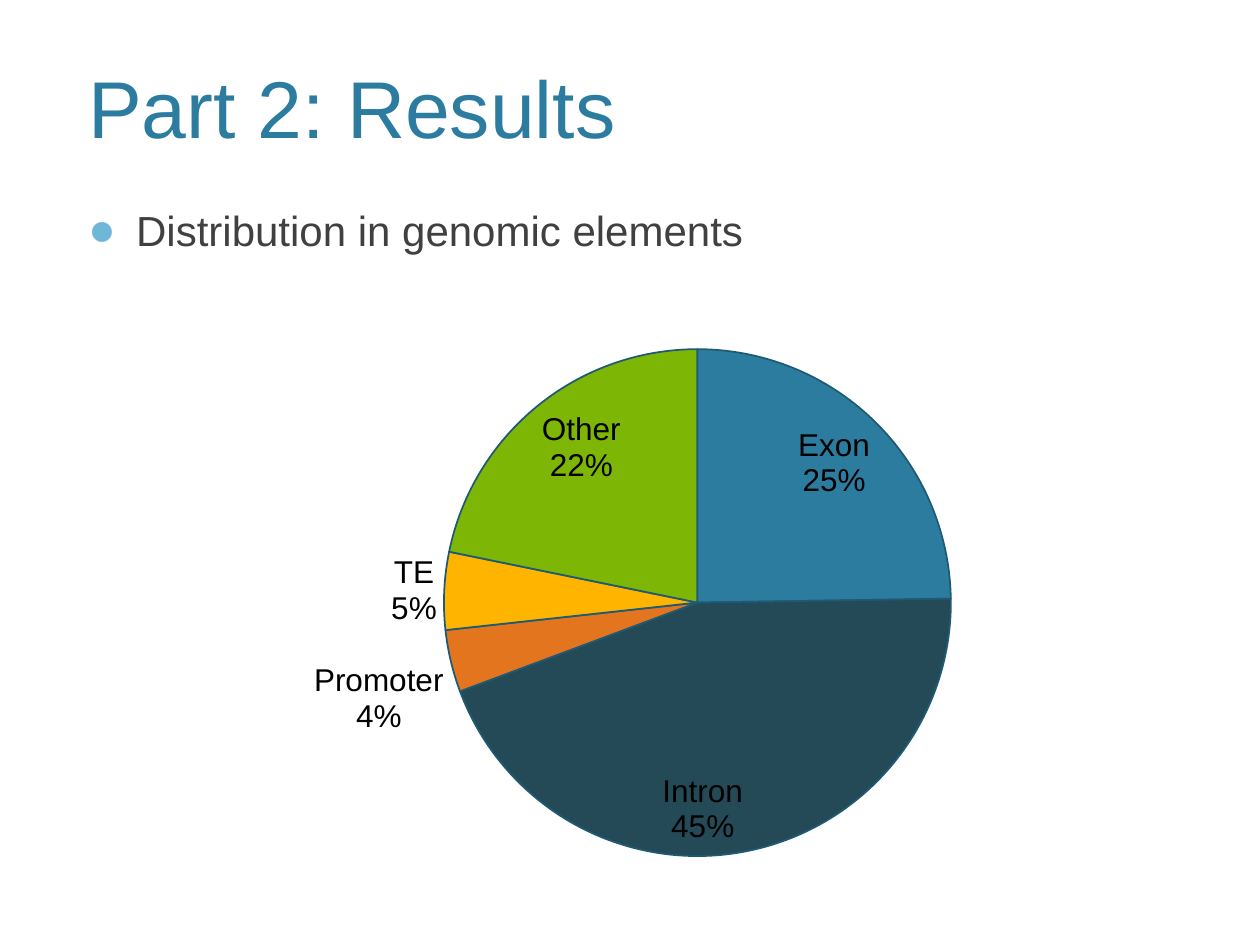
from dataclasses import dataclass

from lxml.etree import SubElement
from pptx import Presentation
from pptx.chart.data import CategoryChartData
from pptx.dml.color import RGBColor
from pptx.enum.chart import XL_CHART_TYPE, XL_LABEL_POSITION as LabelPosition
from pptx.enum.text import MSO_ANCHOR, MSO_AUTO_SIZE, PP_ALIGN
from pptx.oxml import parse_xml
from pptx.oxml.ns import nsdecls, qn
from pptx.util import Cm, Pt


@dataclass(frozen=True)
class Theme:
    font: str = "Arial"
    title: str = "2C7C9F"
    body: str = "404040"
    bullet: str = "6FB7D7"
    label: str = "000000"
    outline: str = "1F5A74"
    title_size: int = 46
    body_size: int = 24
    label_size: int = 18


@dataclass(frozen=True)
class Box:
    left: float
    top: float
    width: float
    height: float

    def lengths(self) -> tuple:
        return Cm(self.left), Cm(self.top), Cm(self.width), Cm(self.height)


@dataclass(frozen=True)
class Slice:
    name: str
    value: int
    color: str
    position: LabelPosition = LabelPosition.INSIDE_END


THEME = Theme()
TITLE_BOX = Box(1.52, -0.46, 22.35, 3.71)
BODY_BOX = Box(1.52, 3.99, 22.35, 12.07)
CHART_BOX = Box(3.45, 5.72, 18.52, 11.89)
PIE_BOX = Box(5.5, 1.32, 10.22, 10.22)
SLICES = [
    Slice("Exon", 25, "2C7C9F"),
    Slice("Intron", 45, "244A58"),
    Slice("Promoter", 4, "E2751D", LabelPosition.OUTSIDE_END),
    Slice("TE", 5, "FFB400", LabelPosition.OUTSIDE_END),
    Slice("Other", 22, "7EB606"),
]


def style_font(font, size: int, color: str) -> None:
    font.name = THEME.font
    font.size = Pt(size)
    font.color.rgb = RGBColor.from_string(color)


def fill_placeholder(shape, box: Box, text: str, size: int, color: str, anchor):
    shape.left, shape.top, shape.width, shape.height = box.lengths()
    frame = shape.text_frame
    frame.word_wrap = True
    frame.auto_size = MSO_AUTO_SIZE.NONE
    frame.vertical_anchor = anchor
    paragraph = frame.paragraphs[0]
    paragraph.alignment = PP_ALIGN.LEFT
    run = paragraph.add_run()
    run.text = text
    style_font(run.font, size, color)
    return paragraph


def add_bullet(paragraph) -> None:
    paragraph.space_before = Pt(20)
    properties = paragraph._p.get_or_add_pPr()
    properties.set("marL", str(Cm(0.97)))
    properties.set("indent", str(-Cm(0.97)))
    color = SubElement(properties, qn("a:buClr"))
    SubElement(color, qn("a:srgbClr"), val=THEME.bullet)
    SubElement(properties, qn("a:buSzPct"), val="110000")
    SubElement(properties, qn("a:buFont"), typeface=THEME.font)
    SubElement(properties, qn("a:buChar"), char="●")


def place_pie(chart, pie: Box, frame: Box) -> None:
    plot_area = chart._chartSpace.chart.plotArea
    for layout in plot_area.findall(qn("c:layout")):
        plot_area.remove(layout)
    layout = parse_xml(f"<c:layout {nsdecls('c')}><c:manualLayout/></c:layout>")
    settings = {
        "layoutTarget": "inner",
        "xMode": "edge",
        "yMode": "edge",
        "x": pie.left / frame.width,
        "y": pie.top / frame.height,
        "w": pie.width / frame.width,
        "h": pie.height / frame.height,
    }
    for name, value in settings.items():
        SubElement(layout[0], qn(f"c:{name}"), val=str(value))
    plot_area.insert(0, layout)


def style_slice(point, part: Slice) -> None:
    point.format.fill.solid()
    point.format.fill.fore_color.rgb = RGBColor.from_string(part.color)
    point.format.line.color.rgb = RGBColor.from_string(THEME.outline)
    point.format.line.width = Pt(1)
    label = point.data_label
    style_font(label.font, THEME.label_size, THEME.label)
    label.position = part.position
    element = label._get_or_add_dLbl()
    for name, shown in {"showVal": "0", "showCatName": "1", "showPercent": "1"}.items():
        element.find(qn(f"c:{name}")).set("val", shown)
    SubElement(element, qn("c:separator")).text = "\n"


def add_pie(slide, slices: list[Slice]) -> None:
    data = CategoryChartData()
    data.categories = [part.name for part in slices]
    data.add_series("Series 1", [part.value for part in slices])
    chart = slide.shapes.add_chart(XL_CHART_TYPE.PIE, *CHART_BOX.lengths(), data).chart
    chart.has_legend = False
    chart.has_title = False
    style_font(chart.font, THEME.label_size, THEME.label)
    plot = chart.plots[0]
    plot.vary_by_categories = True
    for index, part in enumerate(slices):
        style_slice(plot.series[0].points[index], part)
    place_pie(chart, PIE_BOX, CHART_BOX)


def main() -> None:
    presentation = Presentation()
    presentation.slide_width = Cm(25.4)
    presentation.slide_height = Cm(19.05)
    slide = presentation.slides.add_slide(presentation.slide_layouts[1])
    fill_placeholder(slide.shapes.title, TITLE_BOX, "Part 2: Results",
                     THEME.title_size, THEME.title, MSO_ANCHOR.BOTTOM)
    paragraph = fill_placeholder(slide.placeholders[1], BODY_BOX,
                                 "Distribution in genomic elements",
                                 THEME.body_size, THEME.body, MSO_ANCHOR.TOP)
    add_bullet(paragraph)
    add_pie(slide, SLICES)
    presentation.save("out.pptx")


if __name__ == "__main__":
    main()
